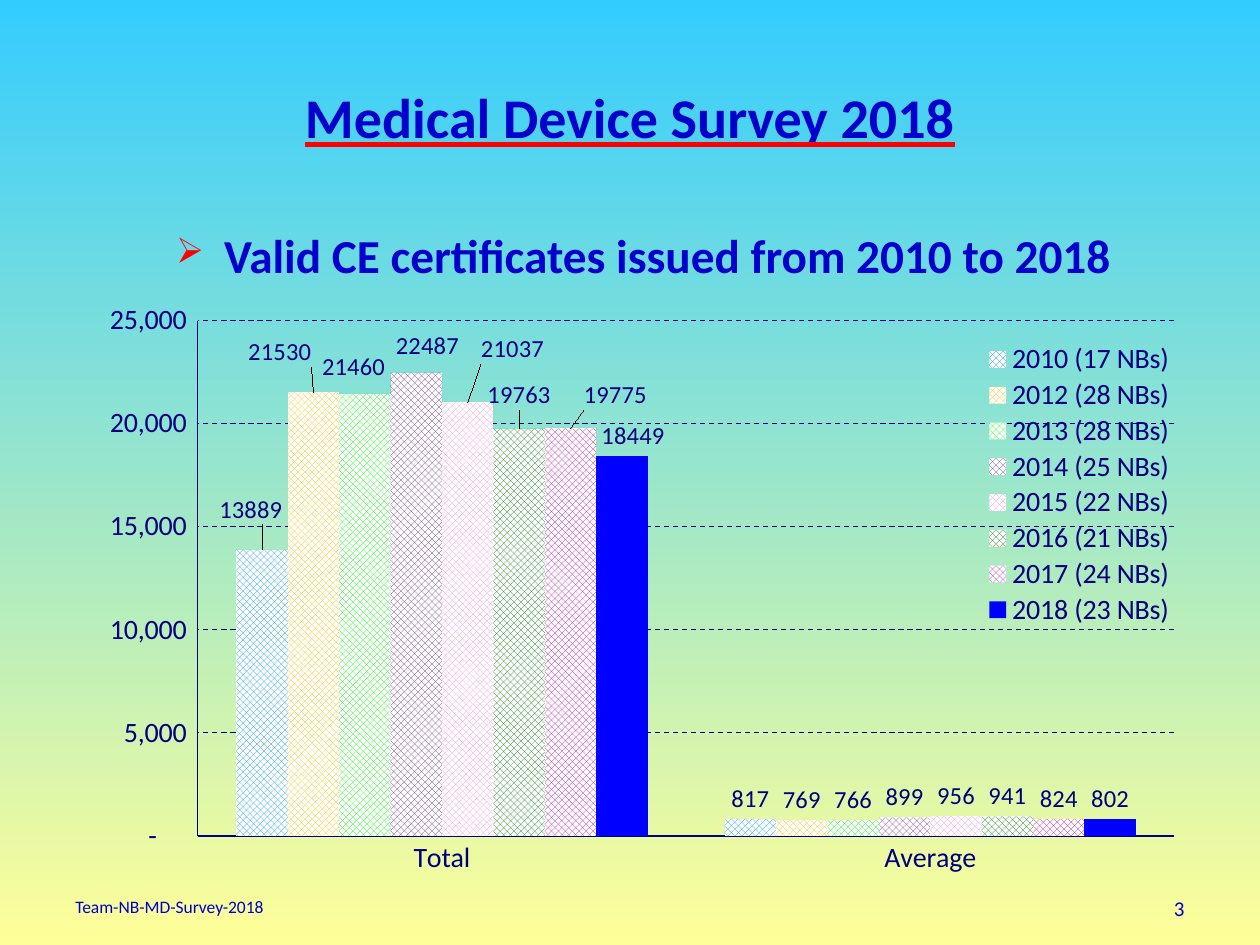
"""Build the medical device survey slide with its certificate chart."""
import lxml.etree
import pptx
import pptx.chart.data
import pptx.dml.color
import pptx.enum.chart
import pptx.enum.dml
import pptx.enum.text
import pptx.oxml
import pptx.oxml.ns
import pptx.util

Inches = pptx.util.Inches
Pt = pptx.util.Pt
RGBColor = pptx.dml.color.RGBColor
ALIGN = pptx.enum.text.PP_ALIGN
ANCHOR = pptx.enum.text.MSO_ANCHOR
qn = pptx.oxml.ns.qn

BLUE = RGBColor(0x00, 0x00, 0xCC)
NAVY = RGBColor(0x00, 0x00, 0x80)
RED = RGBColor(0xFF, 0x00, 0x00)
SKY = RGBColor(0x33, 0xCC, 0xFF)
CREAM = RGBColor(0xFF, 0xFF, 0x99)
WHITE = RGBColor(0xFF, 0xFF, 0xFF)
SOLID = RGBColor(0x00, 0x00, 0xFF)

SERIES = [
    ("2010 (17 NBs)", (13889, 817), RGBColor(0x00, 0x99, 0xFF), (-0.01, -0.03)),
    ("2012 (28 NBs)", (21530, 769), RGBColor(0xFF, 0xC0, 0x00), (-0.03, -0.03)),
    ("2013 (28 NBs)", (21460, 766), RGBColor(0x00, 0xFF, 0x00), (-0.01, -0.01)),
    ("2014 (25 NBs)", (22487, 899), RGBColor(0x70, 0x30, 0xA0), (0.01, -0.01)),
    ("2015 (22 NBs)", (21037, 956), RGBColor(0xFD, 0x91, 0xE8), (0.04, -0.05)),
    ("2016 (21 NBs)", (19763, 941), RGBColor(0x00, 0x80, 0x00), (0, -0.02)),
    ("2017 (24 NBs)", (19775, 824), RGBColor(0xC7, 0x09, 0xB0), (0.04, -0.02)),
    ("2018 (23 NBs)", (18449, 802), SOLID, (0.01, 0)),
]


def add_node(parent, tag, **attrs):
    node = lxml.etree.SubElement(parent, qn(tag))
    for key, value in attrs.items():
        node.set(key, str(value))
    return node


def set_place(parent, index, modes=(), **sizes):
    for old in parent.findall(qn("c:layout")):
        parent.remove(old)
    layout = pptx.oxml.parse_xml(
        f'<c:layout {pptx.oxml.ns.nsdecls("c")}><c:manualLayout/></c:layout>')
    for tag, value in [*modes, *sizes.items()]:
        add_node(layout[0], "c:" + tag, val=value)
    parent.insert(index, layout)


def set_font(font, size, color, bold=False):
    font.name = "Calibri"
    font.size = Pt(size)
    font.bold = bold
    font.color.rgb = color


def set_line(line, color):
    line.width = Pt(0.75)
    line.color.rgb = color


def write(frame, text, size=12, bold=False, align=ALIGN.LEFT, bullet=None, rule=None):
    para = frame.paragraphs[0]
    para.alignment = align
    if bullet:
        props = para._p.get_or_add_pPr()
        props.set("marL", str(Inches(0.38)))
        props.set("indent", str(-Inches(0.38)))
        add_node(add_node(props, "a:buClr"), "a:srgbClr", val=RED)
        add_node(props, "a:buSzPct", val=75000)
        add_node(props, "a:buChar", char=bullet)
    run = para.add_run()
    run.text = text
    set_font(run.font, size, BLUE, bold)
    if rule:
        run.font.underline = True
        props = run._r.get_or_add_rPr()
        under = add_node(props, "a:uFill")
        add_node(add_node(under, "a:solidFill"), "a:srgbClr", val=rule)
        props.find(qn("a:latin")).addprevious(under)


class Deck:
    """Hold the presentation style and the current slide."""

    def __init__(self):
        self.show = pptx.Presentation()
        self.show.slide_width = Inches(10)
        self.show.slide_height = Inches(7.5)
        self.slide = self.show.slides.add_slide(self.show.slide_layouts[6])

    def fade(self, top, bottom):
        fill = self.slide.background.fill
        fill.gradient()
        fill.gradient_angle = 270
        for stop, color, place in zip(fill.gradient_stops, (top, bottom), (0, 1)):
            stop.color.rgb = color
            stop.position = place

    def text(self, box, words, anchor=ANCHOR.TOP, **style):
        frame = self.slide.shapes.add_textbox(*map(Inches, box)).text_frame
        frame.word_wrap = True
        frame.vertical_anchor = anchor
        write(frame, words, **style)

    def chart(self, box, cats, rows):
        kinds = pptx.enum.chart
        data = pptx.chart.data.CategoryChartData()
        data.categories = cats
        for name, values, _, _ in rows:
            data.add_series(name, values)
        chart = self.slide.shapes.add_chart(
            kinds.XL_CHART_TYPE.COLUMN_CLUSTERED, *map(Inches, box), data).chart
        chart.has_title = False
        set_font(chart.font, 16, NAVY)
        plot = chart.plots[0]
        plot.gap_width = 150
        plot.overlap = 0
        plot.vary_by_categories = False
        for series, (_, _, color, shift) in zip(plot.series, rows):
            self.paint(series.format.fill, color)
            self.label(series, shift)
        self.axes(chart)
        chart.has_legend = True
        legend = chart.legend
        legend.position = kinds.XL_LEGEND_POSITION.RIGHT
        legend.include_in_layout = False
        set_font(legend.font, 16, NAVY)
        edges = [("xMode", "edge"), ("yMode", "edge")]
        set_place(legend._element, 1, edges, x=0.81, y=0.18, w=0.17, h=0.43)
        area = chart._chartSpace.chart.plotArea
        set_place(area, 0, [("layoutTarget", "inner"), *edges],
                  x=0.11, y=0.15, w=0.87, h=0.77)

    def paint(self, fill, color):
        if color == SOLID:
            fill.solid()
            fill.fore_color.rgb = color
        else:
            fill.patterned()
            fill.pattern = pptx.enum.dml.MSO_PATTERN.LARGE_CHECKER_BOARD
            fill.fore_color.rgb = color
            fill.back_color.rgb = WHITE

    def label(self, series, shift):
        labels = series.data_labels
        labels.show_value = True
        labels.number_format = "0"
        labels.number_format_is_linked = False
        first = series.points[0].data_label
        for item in (labels, first):
            item.position = pptx.enum.chart.XL_LABEL_POSITION.OUTSIDE_END
            set_font(item.font, 14, NAVY)
        node = labels._element.find(qn("c:dLbl"))
        set_place(node, 1, x=shift[0], y=shift[1])

    def axes(self, chart):
        for axis in (chart.category_axis, chart.value_axis):
            axis.major_tick_mark = pptx.enum.chart.XL_TICK_MARK.NONE
            axis.minor_tick_mark = pptx.enum.chart.XL_TICK_MARK.NONE
            set_font(axis.tick_labels.font, 16, NAVY)
            set_line(axis.format.line, NAVY)
        scale = chart.value_axis
        scale.minimum_scale = 0
        scale.maximum_scale = 25000
        scale.major_unit = 5000
        scale.tick_labels.number_format = '#,##0_-;-#,##0_-;"-"??_-'
        scale.tick_labels.number_format_is_linked = False
        scale.has_major_gridlines = True
        grid = scale.major_gridlines.format.line
        set_line(grid, NAVY)
        grid.dash_style = pptx.enum.dml.MSO_LINE.DASH


def main():
    deck = Deck()
    deck.fade(SKY, CREAM)
    deck.text((0.5, 0.3, 9, 1.25), "Medical Device Survey 2018", ANCHOR.MIDDLE,
              size=32, bold=True, align=ALIGN.CENTER, rule=RED)
    deck.text((7.17, 7.06, 2.33, 0.29), "3", align=ALIGN.RIGHT)
    deck.text((1.3, 1.75, 8.43, 0.82), "Valid CE certificates issued from 2010 to 2018",
              size=27, bold=True, bullet="➢")
    deck.text((0.5, 7.06, 3.17, 0.29), "Team-NB-MD-Survey-2018", size=10)
    deck.chart((0.59, 1.75, 8.91, 5.31), ("Total", "Average"), SERIES)
    deck.show.save("out.pptx")


if __name__ == "__main__":
    main()
